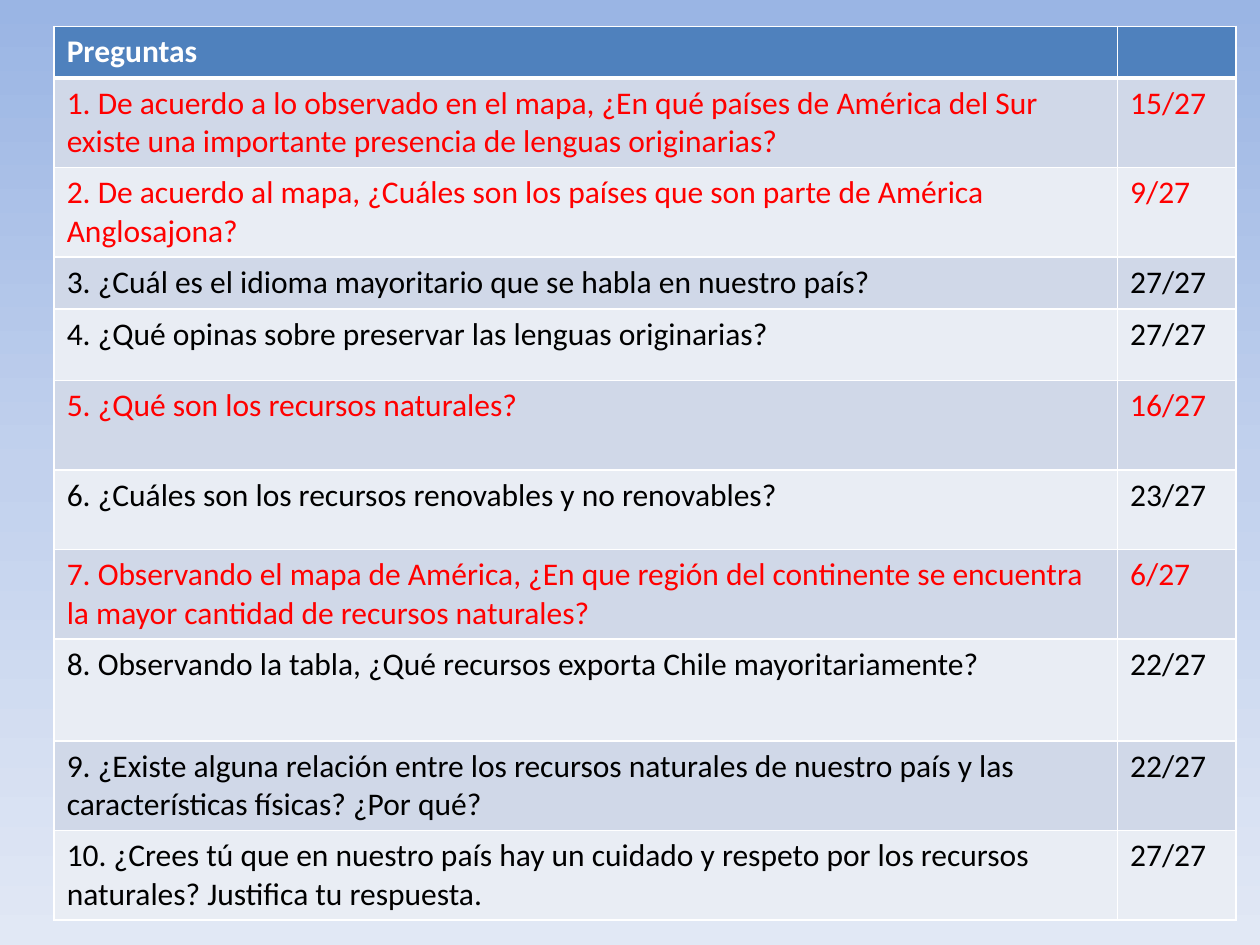
from copy import deepcopy

from lxml.etree import SubElement
from pptx import Presentation
from pptx.dml.color import RGBColor as Color
from pptx.oxml.ns import qn
from pptx.util import Inches, Pt

COLORS = {
    "sky_top": "9AB5E4", "sky_middle": "C2D1ED", "sky_bottom": "E1E8F5",
    "header": "4F81BD", "band_dark": "D0D8E8", "band_light": "E9EDF4",
    "white": "FFFFFF", "black": "000000", "red": "FF0000",
}
FONT = "Calibri"
HEADER = ("Preguntas", "")
HEADER_HEIGHT = 0.41
COLUMN_WIDTHS = (8.44, 0.94)
TOTAL = 27
LOW_SCORE = 16  # scores up to this one are shown in red

# Question, correct answers, row height in inches
QUESTIONS = [
    ("De acuerdo a lo observado en el mapa, ¿En qué países de América del Sur "
     "existe una importante presencia de lenguas originarias?", 15, 0.71),
    ("De acuerdo al mapa, ¿Cuáles son los países que son parte de América "
     "Anglosajona?", 9, 0.71),
    ("¿Cuál es el idioma mayoritario que se habla en nuestro país?", 27, 0.41),
    ("¿Qué opinas sobre preservar las lenguas originarias?", 27, 0.57),
    ("¿Qué son los recursos naturales?", 16, 0.71),
    ("¿Cuáles son los recursos renovables y no renovables?", 23, 0.63),
    ("Observando el mapa de América, ¿En que región del continente se encuentra "
     "la mayor cantidad de recursos naturales?", 6, 0.71),
    ("Observando la tabla, ¿Qué recursos exporta Chile mayoritariamente?", 22, 0.81),
    ("¿Existe alguna relación entre los recursos naturales de nuestro país y las "
     "características físicas? ¿Por qué?", 22, 0.71),
    ("¿Crees tú que en nuestro país hay un cuidado y respeto por los recursos "
     "naturales? Justifica tu respuesta.", 27, 0.71),
]


def color(name):
    return Color.from_string(COLORS[name])


def paint_background(page, names):
    """Fill the page from top to bottom through evenly spaced colours."""
    fill = page.background.fill
    fill.gradient()
    fill.gradient_angle = 270
    stops = page.element.find(".//" + qn("a:gsLst"))
    while len(stops) < len(names):
        stops.append(deepcopy(stops[0]))
    for index, (stop, name) in enumerate(zip(fill.gradient_stops, names)):
        stop.position = index / (len(names) - 1)
        stop.color.rgb = color(name)


def set_borders(cell, top=1, bottom=1):
    properties = cell._tc.get_or_add_tcPr()
    for side, width in (("L", 1), ("R", 1), ("T", top), ("B", bottom)):
        line = SubElement(properties, qn(f"a:ln{side}"), w=str(Pt(width)))
        solid = SubElement(line, qn("a:solidFill"))
        SubElement(solid, qn("a:srgbClr"), val=COLORS["white"])


def fill_cell(cell, text, fill, ink="black", bold=False, **borders):
    set_borders(cell, **borders)
    cell.fill.solid()
    cell.fill.fore_color.rgb = color(fill)
    para = cell.text_frame.paragraphs[0]
    para.font.size = Pt(18)
    if text:
        span = para.add_run()
        span.text = text
        span.font.name = FONT
        span.font.size = Pt(18)
        span.font.bold = bold
        span.font.color.rgb = color(ink)


def add_question_table(page):
    heights = [HEADER_HEIGHT] + [height for _, _, height in QUESTIONS]
    table = page.shapes.add_table(
        len(heights), len(COLUMN_WIDTHS), Inches(0.43), Inches(0.21),
        Inches(sum(COLUMN_WIDTHS)), Inches(sum(heights))).table
    for column, width in zip(table.columns, COLUMN_WIDTHS):
        column.width = Inches(width)
    for row, height in zip(table.rows, heights):
        row.height = Inches(height)

    for column, text in enumerate(HEADER):
        fill_cell(table.cell(0, column), text, "header", "white", bold=True, bottom=3)
    for number, (question, score, _) in enumerate(QUESTIONS, start=1):
        band = "band_dark" if number % 2 else "band_light"
        ink = "red" if score <= LOW_SCORE else "black"
        texts = (f"{number}. {question}", f"{score}/{TOTAL}")
        for column, text in enumerate(texts):
            fill_cell(table.cell(number, column), text, band, ink,
                      top=3 if number == 1 else 1)


def main():
    deck = Presentation()
    deck.slide_width, deck.slide_height = Inches(10), Inches(7.5)
    page = deck.slides.add_slide(deck.slide_layouts[6])
    paint_background(page, ("sky_top", "sky_middle", "sky_bottom"))
    add_question_table(page)
    deck.save("out.pptx")


if __name__ == "__main__":
    main()
